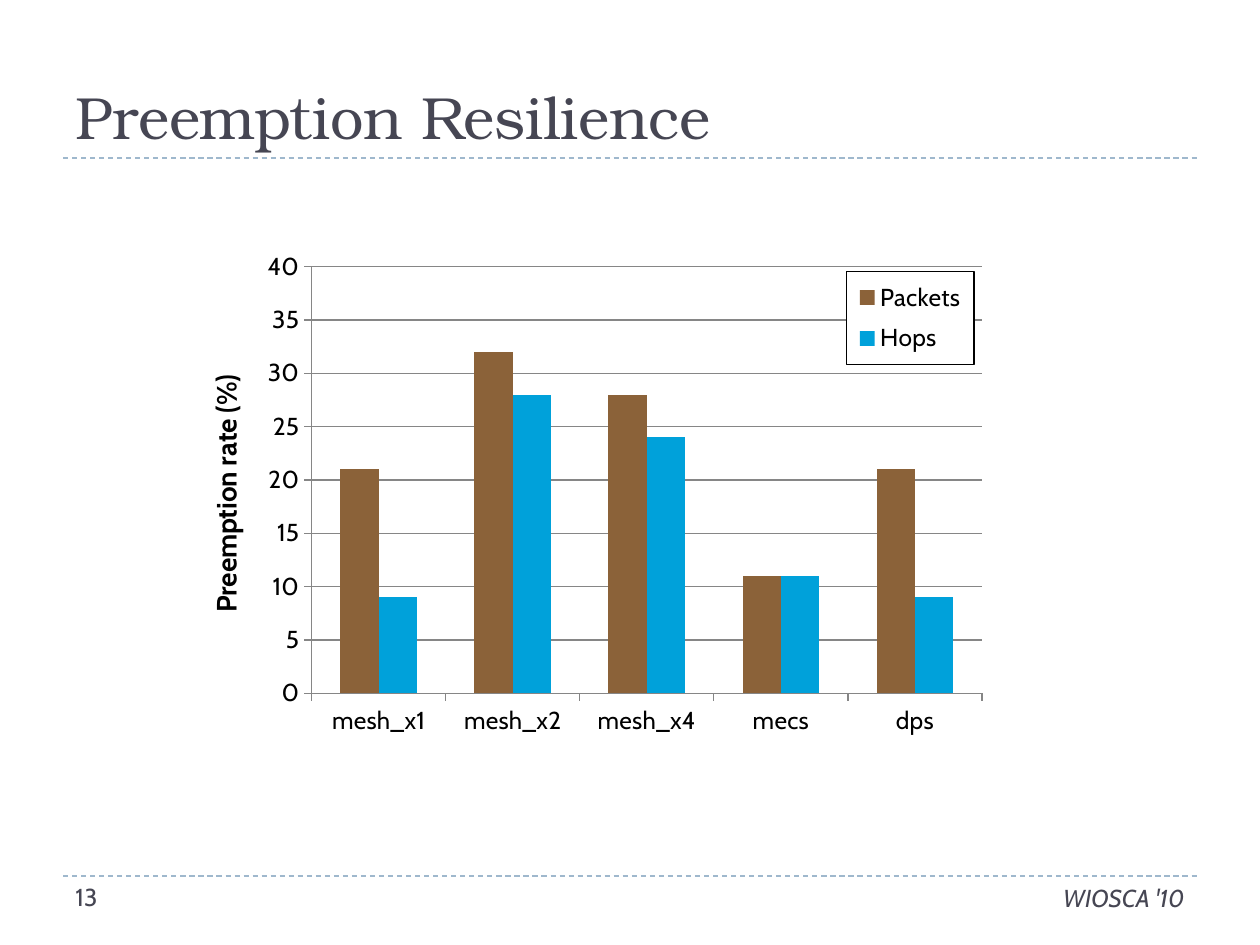
from dataclasses import dataclass

from lxml import etree
from pptx import Presentation
from pptx import util as u
from pptx.chart.data import CategoryChartData
from pptx.dml.color import RGBColor
from pptx.enum import chart as ch, dml, shapes, text
from pptx.oxml import parse_xml
from pptx.oxml.ns import nsdecls, qn

EMU_PER_PX = 914400 / 126


@dataclass(frozen=True)
class Theme:
    ink: str = "464653"
    rule: str = "9FB8CD"
    axis: str = "868686"
    black: str = "000000"
    white: str = "FFFFFF"
    heading_font: str = "TeX Gyre Bonum"
    body_font: str = "Cabin"
    title_size: int = 34
    axis_title_size: int = 16
    small_size: int = 14
    base_size: int = 10


@dataclass(frozen=True)
class Box:
    left: int
    top: int
    width: int
    height: int

    def emu(self) -> tuple:
        return tuple(px(v) for v in (self.left, self.top, self.width, self.height))


@dataclass(frozen=True)
class FooterNote:
    wording: str
    box: Box
    align: text.PP_ALIGN
    italic: bool


@dataclass(frozen=True)
class Series:
    name: str
    values: tuple
    color: str


THEME = Theme()
TITLE_BOX = Box(63, 32, 1134, 126)
CHART_BOX = Box(200, 241, 798, 514)
RULE_TOPS = (876, 158)
FOOTER_NOTES = (
    FooterNote("WIOSCA '10", Box(336, 877, 861, 50), text.PP_ALIGN.RIGHT, True),
    FooterNote("13", Box(63, 876, 262, 50), text.PP_ALIGN.LEFT, False),
)
TOPOLOGIES = ("mesh_x1", "mesh_x2", "mesh_x4", "mecs", "dps")
RATES = (
    Series("Packets", (21, 32, 28, 11, 21), "8B6239"),
    Series("Hops", (9, 28, 24, 11, 9), "00A1DA"),
)


def px(value: int) -> int:
    return round(value * EMU_PER_PX)


def rgb(color: str) -> RGBColor:
    return RGBColor.from_string(color)


def style_font(font, size: int, color: str, name: str = THEME.body_font,
               bold: bool = False, italic: bool = False) -> None:
    font.size = u.Pt(size)
    font.name = name
    font.color.rgb = rgb(color)
    font.bold = bold
    font.italic = italic


def style_line(line, color: str) -> None:
    line.color.rgb = rgb(color)
    line.width = u.Pt(0.75)


def draw_rule(slide, top: int) -> None:
    rule = slide.shapes.add_connector(
        shapes.MSO_CONNECTOR.STRAIGHT, px(63), px(top), px(1197), px(top))
    style_line(rule.line, THEME.rule)
    rule.line.dash_style = dml.MSO_LINE.DASH
    etree.SubElement(rule._element.spPr, qn("a:effectLst"))


def fill_title(slide, wording: str) -> None:
    title = slide.shapes.title
    title.left, title.top, title.width, title.height = TITLE_BOX.emu()
    frame = title.text_frame
    frame.text = wording
    frame.auto_size = text.MSO_AUTO_SIZE.NONE
    frame.vertical_anchor = text.MSO_ANCHOR.BOTTOM
    heading = frame.paragraphs[0]
    heading.alignment = text.PP_ALIGN.LEFT
    style_font(heading.runs[0].font, THEME.title_size, THEME.ink, THEME.heading_font)


def draw_footer(slide, note: FooterNote) -> None:
    frame = slide.shapes.add_textbox(*note.box.emu()).text_frame
    frame.word_wrap = True
    frame.text = note.wording
    paragraph = frame.paragraphs[0]
    paragraph.alignment = note.align
    style_font(paragraph.runs[0].font, THEME.small_size, THEME.ink, italic=note.italic)


def manual_layout(x: float, y: float, w: float, h: float, inner: bool = False):
    target = '<c:layoutTarget val="inner"/>' if inner else ""
    return parse_xml(
        f'<c:layout {nsdecls("c")}><c:manualLayout>{target}'
        '<c:xMode val="edge"/><c:yMode val="edge"/>'
        f'<c:x val="{x}"/><c:y val="{y}"/><c:w val="{w}"/><c:h val="{h}"/>'
        '</c:manualLayout></c:layout>')


def style_axis(axis) -> None:
    axis.major_tick_mark = ch.XL_TICK_MARK.OUTSIDE
    axis.minor_tick_mark = ch.XL_TICK_MARK.NONE
    style_font(axis.tick_labels.font, THEME.small_size, THEME.black)
    style_line(axis.format.line, THEME.axis)


def style_legend(chart) -> None:
    chart.has_legend = True
    legend = chart.legend
    legend.position = ch.XL_LEGEND_POSITION.RIGHT
    legend.include_in_layout = False
    style_font(legend.font, THEME.small_size, THEME.black)
    element = legend._element
    for old in element.findall(qn("c:layout")):
        element.remove(old)
    element.find(qn("c:legendPos")).addnext(manual_layout(0.81, 0.06, 0.16, 0.18))
    element.find(qn("c:txPr")).addprevious(parse_xml(
        f'<c:spPr {nsdecls("c", "a")}>'
        f'<a:solidFill><a:srgbClr val="{THEME.white}"/></a:solidFill>'
        f'<a:ln w="9525"><a:solidFill><a:srgbClr val="{THEME.black}"/></a:solidFill></a:ln>'
        '</c:spPr>'))


def draw_rates(slide) -> None:
    data = CategoryChartData()
    data.categories = TOPOLOGIES
    for rate in RATES:
        data.add_series(rate.name, rate.values)
    chart = slide.shapes.add_chart(
        ch.XL_CHART_TYPE.COLUMN_CLUSTERED, *CHART_BOX.emu(), data).chart
    style_font(chart.font, THEME.base_size, THEME.black)
    chart.has_title = False

    plot = chart.plots[0]
    plot.gap_width = 150
    plot.overlap = 0
    plot.vary_by_categories = False
    for bars, rate in zip(plot.series, RATES):
        bars.format.fill.solid()
        bars.format.fill.fore_color.rgb = rgb(rate.color)

    style_axis(chart.category_axis)
    percent = chart.value_axis
    style_axis(percent)
    percent.minimum_scale, percent.maximum_scale, percent.major_unit = 0, 40, 5
    percent.has_major_gridlines = True
    style_line(percent.major_gridlines.format.line, THEME.axis)
    caption = percent.axis_title.text_frame
    caption.text = "Preemption rate (%)"
    style_font(caption.paragraphs[0].runs[0].font,
               THEME.axis_title_size, THEME.black, bold=True)

    style_legend(chart)
    plot_area = chart._chartSpace.chart.plotArea
    for old in plot_area.findall(qn("c:layout")):
        plot_area.remove(old)
    plot_area.insert(0, manual_layout(0.14, 0.05, 0.84, 0.83, inner=True))


def main() -> None:
    deck = Presentation()
    deck.slide_width, deck.slide_height = px(1260), px(945)
    slide = deck.slides.add_slide(deck.slide_layouts[5])
    for top in RULE_TOPS:
        draw_rule(slide, top)
    fill_title(slide, "Preemption Resilience")
    for note in FOOTER_NOTES:
        draw_footer(slide, note)
    draw_rates(slide)
    deck.save("out.pptx")


if __name__ == "__main__":
    main()
